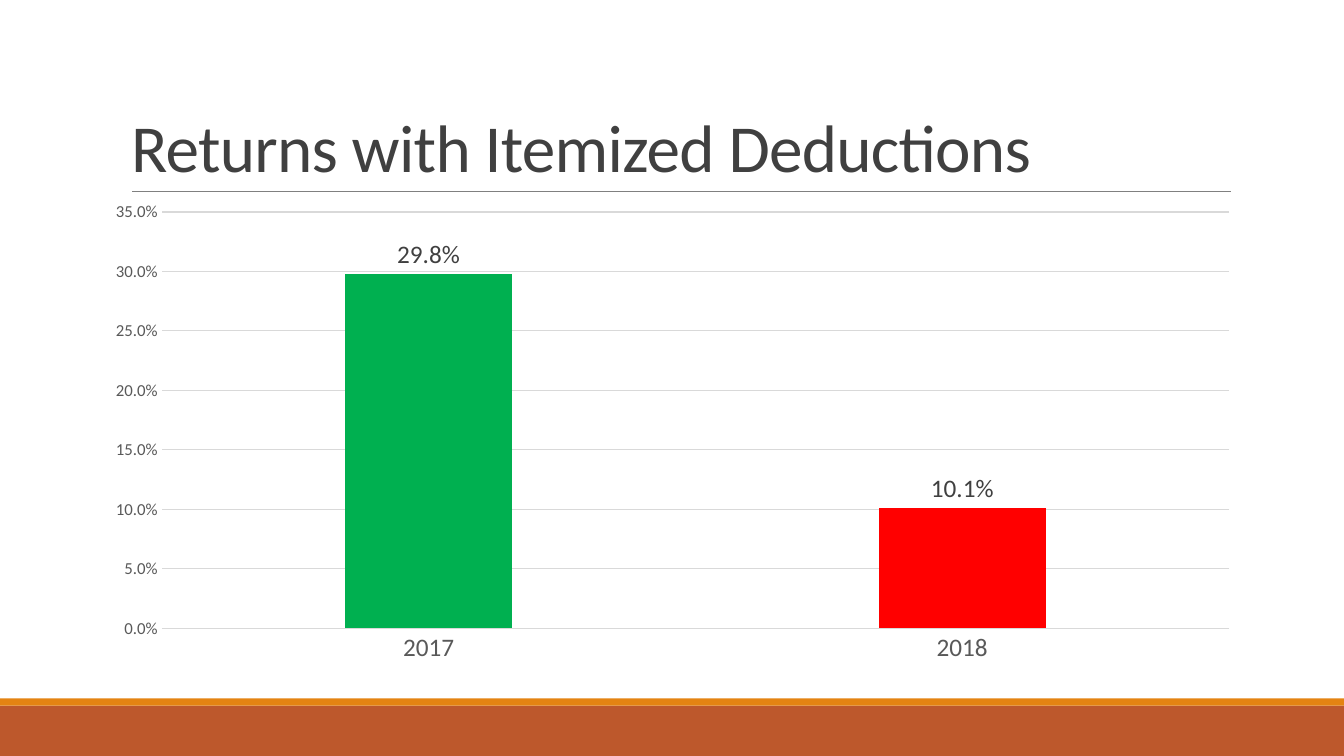
from dataclasses import dataclass

from lxml import etree
from pptx import Presentation
from pptx.chart.data import CategoryChartData
from pptx.dml.color import RGBColor
from pptx.enum.chart import XL_CHART_TYPE, XL_LABEL_POSITION, XL_TICK_MARK
from pptx.enum.shapes import MSO_CONNECTOR, MSO_SHAPE
from pptx.enum.text import MSO_ANCHOR, MSO_AUTO_SIZE, PP_ALIGN
from pptx.oxml.ns import qn
from pptx.util import Inches, Pt

COLUMNS = XL_CHART_TYPE.COLUMN_CLUSTERED
OUTSIDE_END = XL_LABEL_POSITION.OUTSIDE_END
NO_TICK = XL_TICK_MARK.NONE
STRAIGHT = MSO_CONNECTOR.STRAIGHT
RECTANGLE = MSO_SHAPE.RECTANGLE
BOTTOM = MSO_ANCHOR.BOTTOM
NO_FIT = MSO_AUTO_SIZE.NONE
LEFT = PP_ALIGN.LEFT

# Content
TITLE = "Returns with Itemized Deductions"
RETURNS = {"2017": 0.298, "2018": 0.101}
SERIES_NAME = "Series 1"
PERCENT = "0.0%"
AXIS_TOP, AXIS_STEP = 0.35, 0.05

# Layout in inches
PAGE_WIDTH, PAGE_HEIGHT = 13.33, 7.5
FOOTER_HEIGHT, STRIPE_HEIGHT = 0.5, 0.07
TITLE_BOX = (1.2, 0.31, 11, 1.59)
RULE = (1.31, 1.9, 12.21, 1.9)
CHART_BOX = (0.92, 1.91, 11.5, 4.76)


@dataclass(frozen=True)
class Theme:
    font: str = "Calibri"
    background: str = "FFFFFF"
    footer: str = "BD582C"
    stripe: str = "E48312"
    rule: str = "808080"
    text: str = "404040"
    axis_text: str = "595959"
    grid: str = "D9D9D9"
    bars: tuple = ("00B050", "FF0000")
    title_size: float = 48
    label_size: float = 18
    axis_size: float = 12
    chart_size: float = 10


THEME = Theme()


def rgb(color):
    return RGBColor.from_string(color)


def inches(values):
    return [Inches(value) for value in values]


def paint(fill, color):
    fill.solid()
    fill.fore_color.rgb = rgb(color)


def style_font(font, size, color):
    font.name = THEME.font
    font.size = Pt(size)
    font.color.rgb = rgb(color)


def style_line(line, color, width):
    line.color.rgb = rgb(color)
    line.width = Pt(width)


def add_band(page, top, height, color):
    band = page.shapes.add_shape(
        RECTANGLE, *inches((0, top, PAGE_WIDTH, height)))
    band.shadow.inherit = False
    paint(band.fill, color)
    band.line.fill.background()


def add_rule(page):
    rule = page.shapes.add_connector(STRAIGHT, *inches(RULE))
    style_line(rule.line, THEME.rule, 0.5)
    etree.SubElement(rule._element.spPr, qn("a:effectLst"))


def set_title(page):
    title = page.shapes.title
    title.left, title.top, title.width, title.height = inches(TITLE_BOX)
    frame = title.text_frame
    frame.text = TITLE
    frame.word_wrap = True
    frame.auto_size = NO_FIT
    frame.vertical_anchor = BOTTOM
    para = frame.paragraphs[0]
    para.alignment = LEFT
    para.line_spacing = 0.85
    span = para.runs[0]
    style_font(span.font, THEME.title_size, THEME.text)
    span._r.get_or_add_rPr().set("spc", "-50")


def add_returns_chart(page):
    data = CategoryChartData(number_format=PERCENT)
    data.categories = list(RETURNS)
    data.add_series(SERIES_NAME, list(RETURNS.values()))
    chart = page.shapes.add_chart(COLUMNS, *inches(CHART_BOX), data).chart
    chart.has_legend = False
    chart.has_title = False
    style_font(chart.font, THEME.chart_size, "000000")

    # Axes
    years, shares = chart.category_axis, chart.value_axis
    for axis, size in ((years, THEME.label_size), (shares, THEME.axis_size)):
        axis.major_tick_mark = axis.minor_tick_mark = NO_TICK
        style_font(axis.tick_labels.font, size, THEME.axis_text)
    style_line(years.format.line, THEME.grid, 0.75)
    shares.format.line.fill.background()
    style_line(shares.major_gridlines.format.line, THEME.grid, 0.75)
    shares.minimum_scale, shares.maximum_scale = 0, AXIS_TOP
    shares.major_unit = AXIS_STEP
    shares.tick_labels.number_format = PERCENT
    shares.tick_labels.number_format_is_linked = False

    # Bars and their labels
    plot = chart.plots[0]
    plot.gap_width, plot.overlap = 219, -27
    plot.vary_by_categories = False
    series = plot.series[0]
    paint(series.format.fill, THEME.stripe)
    for index, color in enumerate(THEME.bars):
        paint(series.points[index].format.fill, color)
    labels = series.data_labels
    labels.show_value = True
    labels.position = OUTSIDE_END
    labels.number_format = PERCENT
    labels.number_format_is_linked = False
    style_font(labels.font, THEME.label_size, THEME.text)


def main():
    deck = Presentation()
    deck.slide_width, deck.slide_height = inches((PAGE_WIDTH, PAGE_HEIGHT))
    page = deck.slides.add_slide(deck.slide_layouts[5])
    paint(page.background.fill, THEME.background)

    # Footer bands, rule, title and chart
    footer_top = PAGE_HEIGHT - FOOTER_HEIGHT
    add_band(page, footer_top, FOOTER_HEIGHT, THEME.footer)
    add_band(page, footer_top - STRIPE_HEIGHT, STRIPE_HEIGHT, THEME.stripe)
    add_rule(page)
    set_title(page)
    add_returns_chart(page)
    deck.save("out.pptx")


if __name__ == "__main__":
    main()
